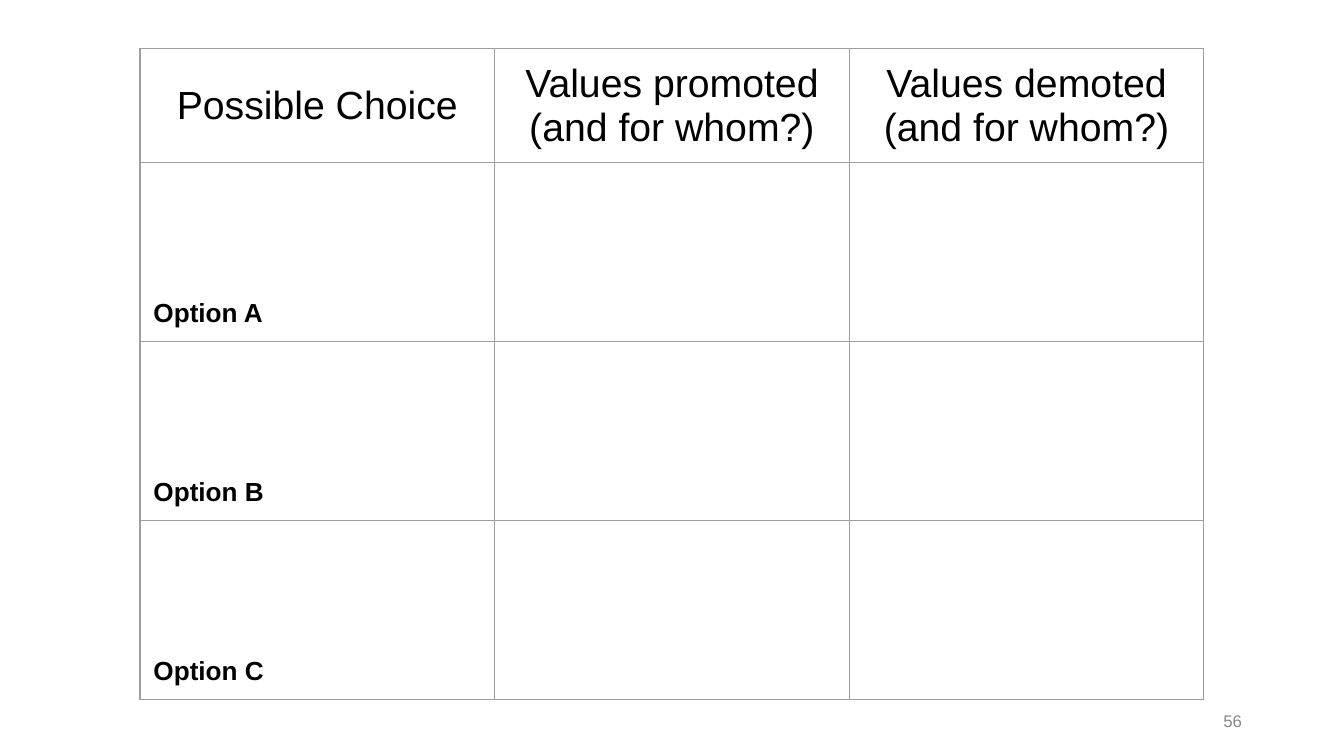
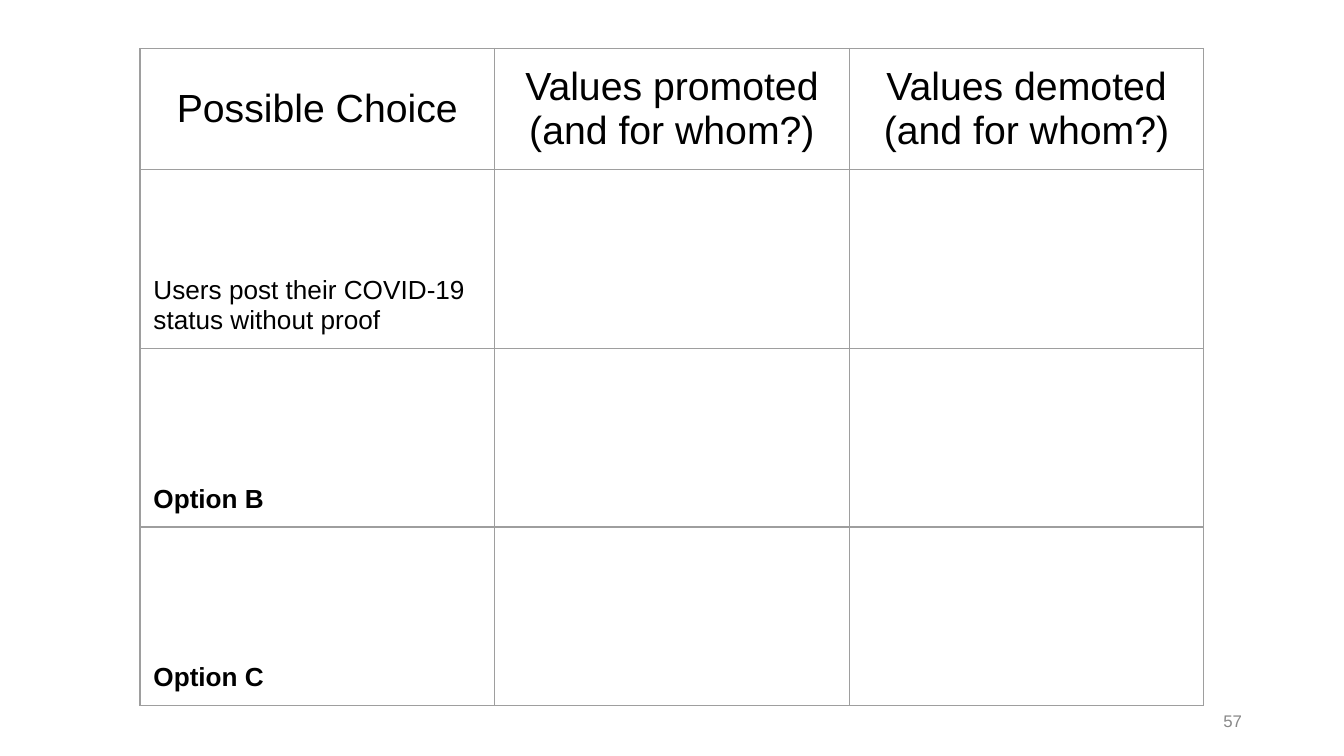
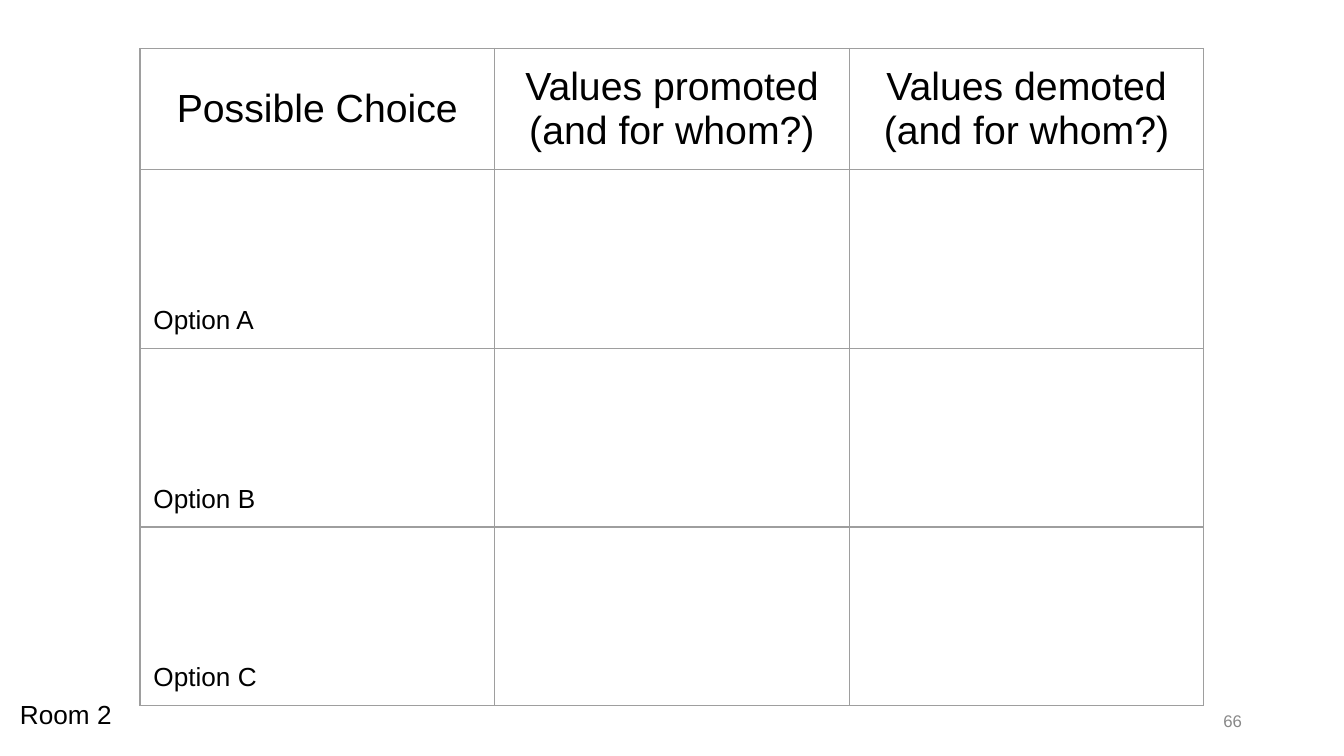
import pptx
import pptx.dml.color
import pptx.enum.text
import pptx.oxml.ns
import pptx.util
import lxml.etree

Pt = pptx.util.Pt
ALIGN = pptx.enum.text.PP_ALIGN
ANCHOR = pptx.enum.text.MSO_ANCHOR

HEADINGS = [
    "Possible Choice",
    "Values promoted (and for whom?)",
    "Values demoted (and for whom?)",
]


def color(hex_string):
    return pptx.dml.color.RGBColor.from_string(hex_string)


def write(frame, text, size=14, bold=False, ink="000000", align=ALIGN.LEFT, font="Arial"):
    para = frame.paragraphs[0]
    para.alignment = align
    span = para.add_run()
    span.text = text
    span.font.name = font
    span.font.size = Pt(size)
    span.font.bold = bold
    span.font.color.rgb = color(ink)


def set_margins(target, across, down):
    target.margin_left = target.margin_right = Pt(across)
    target.margin_top = target.margin_bottom = Pt(down)


class Sheet:
    border = "9E9E9E"
    border_width = 0.75
    number_ink = "888888"
    padding = 7.2
    column_width = 190
    header_height = 56.2
    option_height = 95.8

    def __init__(self, deck):
        self.deck = deck
        self.page = None

    def new_page(self):
        self.page = self.deck.slides.add_slide(self.deck.slide_layouts[6])

    def text(self, text, left, top, width, height, margins, anchor=ANCHOR.TOP, **style):
        box = self.page.shapes.add_textbox(Pt(left), Pt(top), Pt(width), Pt(height))
        frame = box.text_frame
        frame.word_wrap = True
        frame.vertical_anchor = anchor
        set_margins(frame, *margins)
        write(frame, text, **style)

    def number(self, number):
        self.text(str(number), 508.3, 375.1, 162, 21.6, (5, 2.9), anchor=ANCHOR.MIDDLE,
                  size=9, ink=self.number_ink, align=ALIGN.RIGHT)

    def room(self, name):
        self.text(name, 3.6, 367.2, 94.3, 37.4, (self.padding, self.padding))

    def format_cell(self, cell, anchor):
        set_margins(cell, self.padding, self.padding)
        cell.vertical_anchor = anchor
        properties = cell._tc.get_or_add_tcPr()
        qn = pptx.oxml.ns.qn
        for edge in ("a:lnL", "a:lnR", "a:lnT", "a:lnB"):
            line = lxml.etree.SubElement(properties, qn(edge), w=str(Pt(self.border_width)))
            fill = lxml.etree.SubElement(line, qn("a:solidFill"))
            lxml.etree.SubElement(fill, qn("a:srgbClr"), val=self.border)
        cell.fill.background()

    def choice_table(self, options):
        heights = [self.header_height] + [self.option_height] * len(options)
        table = self.page.shapes.add_table(
            len(heights), len(HEADINGS), Pt(75), Pt(26),
            Pt(self.column_width * len(HEADINGS)), Pt(sum(heights))).table
        table.first_row = table.horz_banding = False
        for column in table.columns:
            column.width = Pt(self.column_width)
        for index, (row, height) in enumerate(zip(table.rows, heights)):
            row.height = Pt(height)
            for cell in row.cells:
                self.format_cell(cell, ANCHOR.BOTTOM if index else ANCHOR.MIDDLE)
        for column, heading in enumerate(HEADINGS):
            write(table.cell(0, column).text_frame, heading, size=21, align=ALIGN.CENTER)
        for row, (option, bold) in enumerate(options, 1):
            write(table.cell(row, 0).text_frame, option, bold=bold)


def main():
    deck = pptx.Presentation()
    deck.slide_width, deck.slide_height = Pt(720), Pt(405)
    sheet = Sheet(deck)
    pages = [
        (56, None, [("Option A", True), ("Option B", True), ("Option C", True)]),
        (57, None, [("Users post their COVID-19 status without proof", False),
                    ("Option B", True), ("Option C", True)]),
        (66, "Room 2", [("Option A", False), ("Option B", False), ("Option C", False)]),
    ]
    for number, room, options in pages:
        sheet.new_page()
        sheet.choice_table(options)
        if room:
            sheet.room(room)
        sheet.number(number)
    deck.save("out.pptx")


if __name__ == "__main__":
    main()
